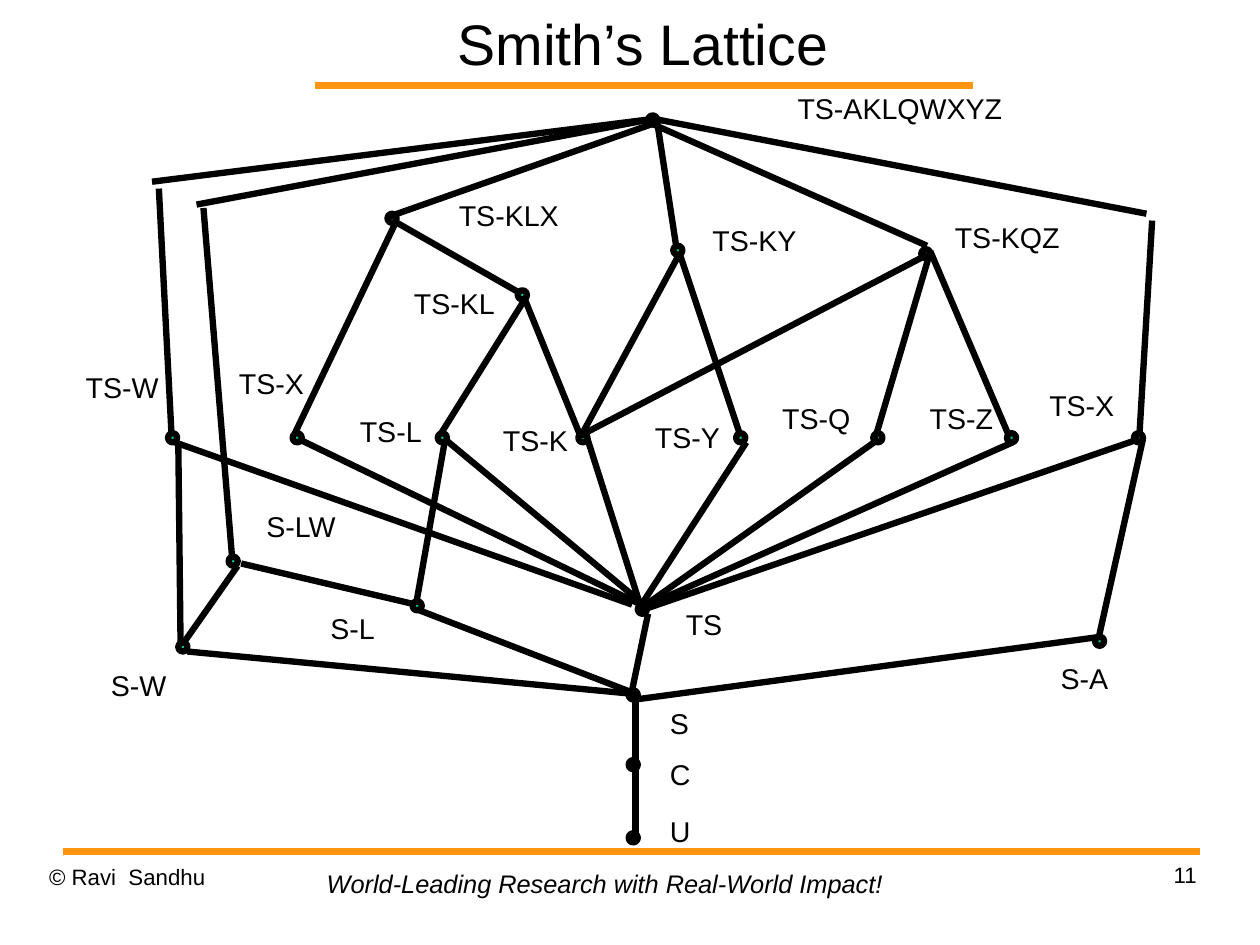
from dataclasses import dataclass

from lxml import etree
from pptx import Presentation
from pptx.dml.color import RGBColor
from pptx.enum.shapes import MSO_CONNECTOR, MSO_SHAPE
from pptx.enum.text import MSO_ANCHOR, PP_ALIGN
from pptx.oxml.ns import qn
from pptx.util import Inches, Pt

LINE = MSO_CONNECTOR.STRAIGHT
OVAL = MSO_SHAPE.OVAL
TOP, MIDDLE = MSO_ANCHOR.TOP, MSO_ANCHOR.MIDDLE
LEFT, CENTER, RIGHT = PP_ALIGN.LEFT, PP_ALIGN.CENTER, PP_ALIGN.RIGHT


@dataclass(frozen=True)
class Theme:
    """Colours, type sizes and line widths of the slide."""
    font: str = "Arial"
    ink: RGBColor = RGBColor(0x00, 0x00, 0x00)
    rule: RGBColor = RGBColor(0xFF, 0x95, 0x0E)
    node: RGBColor = RGBColor(0x00, 0xCC, 0x99)
    title: int = 36
    label: int = 18
    motto: int = 16
    small: int = 14
    edge: float = 4
    bar: float = 4.31
    dot: float = 0.08


def write(frame, text, theme, size, align=LEFT, space=1.0, pad=(0, 0),
          wrap=True, anchor=TOP, italic=False):
    """Put formatted text into a frame."""
    frame.margin_left = frame.margin_right = Inches(pad[0])
    frame.margin_top = frame.margin_bottom = Inches(pad[1])
    frame.word_wrap = wrap
    frame.vertical_anchor = anchor
    para = frame.paragraphs[0]
    para.alignment = align
    para.line_spacing = space
    para.space_before = Pt(0)
    run = para.add_run()
    run.text = text
    font = run.font
    font.name = theme.font
    font.size = Pt(size)
    font.italic = italic
    font.color.rgb = theme.ink


class Board:
    """Holds the theme and the current slide."""

    def __init__(self, slide, theme):
        """Keep the slide and its style."""
        self.slide = slide
        self.theme = theme

    def title(self, text, left, top, width, height):
        """Place and fill the title placeholder."""
        shape = self.slide.shapes.title
        shape.left, shape.top = Inches(left), Inches(top)
        shape.width, shape.height = Inches(width), Inches(height)
        write(shape.text_frame, text, self.theme, self.theme.title,
              align=CENTER, anchor=MIDDLE)

    def text(self, text, left, top, width, height, size, **style):
        """Add a text box."""
        box = self.slide.shapes.add_textbox(
            Inches(left), Inches(top), Inches(width), Inches(height))
        write(box.text_frame, text, self.theme, size, **style)

    def label(self, text, left, top, width, align):
        """Add the name of a node."""
        self.text(text, left, top, width, 0.37, self.theme.label, align=align,
                  space=0.85, pad=(0.07, 0.03), wrap=False)

    def line(self, start, end, color, width):
        """Add a straight line without a shadow."""
        line = self.slide.shapes.add_connector(
            LINE, *(Inches(value) for value in (*start, *end)))
        line.line.color.rgb = color
        line.line.width = Pt(width)
        etree.SubElement(line._element.spPr, qn("a:effectLst"))

    def rule(self, left, right, top):
        """Add a level orange rule."""
        self.line((left, top), (right, top), self.theme.rule, self.theme.bar)

    def edge(self, start, end):
        """Add an edge of the lattice."""
        self.line(start, end, self.theme.ink, self.theme.edge)

    def node(self, left, top):
        """Add a node of the lattice."""
        size = Inches(self.theme.dot)
        dot = self.slide.shapes.add_shape(
            OVAL, Inches(left), Inches(top), size, size)
        dot.shadow.inherit = False
        dot.fill.solid()
        dot.fill.fore_color.rgb = self.theme.node
        dot.line.color.rgb = self.theme.ink
        dot.line.width = Pt(self.theme.edge)


ROW = [1.47, 2.56, 3.83, 5.06, 6.44, 7.64, 8.81, 9.92]
STEM = [6.04, 6.65, 7.29]
NODES = [(5.67, 1.01), (2, 4.87), (1.56, 5.62), (3.61, 5.26), (9.58, 5.57),
         (5.58, 5.29), (4.53, 2.54), (5.89, 2.15), (8.06, 2.18), (3.39, 1.87)]
NODES += [(left, 3.79) for left in ROW] + [(5.5, top) for top in STEM]

EDGES = [
    ((5.56, 6.12), (5.56, 7.34)), ((1.64, 5.7), (5.53, 6.07)),
    ((5.56, 6.12), (9.64, 5.57)), ((2.08, 4.95), (1.61, 5.62)),
    ((3.67, 5.34), (5.56, 6.07)), ((2.11, 4.93), (3.64, 5.29)),
    ((1.56, 3.87), (1.58, 5.65)), ((10, 3.84), (9.61, 5.59)),
    ((1.53, 3.87), (5.53, 5.29)), ((2.61, 3.84), (5.67, 5.32)),
    ((3.89, 3.84), (5.67, 5.32)), ((5.14, 3.84), (5.61, 5.32)),
    ((6.53, 3.87), (5.58, 5.34)), ((7.69, 3.84), (5.61, 5.32)),
    ((8.86, 3.87), (5.61, 5.32)), ((9.97, 3.84), (5.61, 5.34)),
    ((5.67, 5.37), (5.53, 6.04)), ((3.89, 3.87), (3.64, 5.29)),
    ((4.61, 2.59), (3.86, 3.79)), ((4.58, 2.59), (5.08, 3.82)),
    ((5.94, 2.23), (5.08, 3.82)), ((5.94, 2.2), (6.47, 3.79)),
    ((8.11, 2.23), (5.06, 3.82)), ((8.14, 2.2), (8.83, 3.82)),
    ((8.14, 2.2), (7.67, 3.79)), ((3.47, 1.93), (2.58, 3.79)),
    ((3.44, 1.93), (4.56, 2.57)), ((5.75, 1.07), (3.39, 1.9)),
    ((5.75, 1.07), (5.92, 2.18)), ((5.72, 1.09), (8.11, 2.15)),
    ((5.72, 1.04), (1.72, 1.79)), ((1.78, 1.82), (2.03, 4.87)),
    ((5.72, 1.04), (1.33, 1.59)), ((1.39, 1.65), (1.5, 3.79)),
    ((5.72, 1.04), (10.03, 1.87)), ((10.08, 1.93), (9.97, 3.79)),
]

LABELS = {
    LEFT: [
        ("TS-W", 0.68, 3.25, 0.83), ("S-W", 0.9, 5.86, 0.68),
        ("TS", 5.93, 5.33, 0.51), ("S", 5.79, 6.19, 0.36),
        ("C", 5.79, 6.64, 0.38), ("U", 5.79, 7.14, 0.38),
        ("S-L", 2.82, 5.36, 0.6), ("S-LW", 2.26, 4.47, 0.83),
        ("S-A", 9.21, 5.8, 0.62),
    ],
    RIGHT: [
        ("TS-X", 1.97, 3.22, 0.76), ("TS-L", 3.01, 3.64, 0.75),
        ("TS-K", 4.26, 3.72, 0.78), ("TS-Y", 5.61, 3.69, 0.76),
        ("TS-Q", 6.73, 3.52, 0.78), ("TS-Z", 8.01, 3.52, 0.75),
        ("TS-X", 9.06, 3.41, 0.76), ("TS-KL", 3.47, 2.52, 0.93),
        ("TS-KLX", 3.86, 1.75, 1.1), ("TS-KY", 6.1, 1.97, 0.94),
        ("TS-KQZ", 8.22, 1.94, 1.12), ("TS-AKLQWXYZ", 6.81, 0.81, 2.03),
    ],
}


def main():
    """Build the lattice slide and save it."""
    deck = Presentation()
    deck.slide_width = Inches(28 / 2.54)
    deck.slide_height = Inches(21 / 2.54)
    theme = Theme()
    board = Board(deck.slides.add_slide(deck.slide_layouts[5]), theme)
    board.rule(2.76, 8.51, 0.75)
    board.rule(0.55, 10.5, 7.45)
    board.title("Smith’s Lattice", 2.41, 0, 6.43, 0.75)
    for spot in NODES:
        board.node(*spot)
    for start, end in EDGES:
        board.edge(start, end)
    for align, group in LABELS.items():
        for item in group:
            board.label(*item, align)
    board.text("© Ravi  Sandhu", 0.43, 7.55, 2.57, 0.57, theme.small,
               space=1.01)
    board.text("World-Leading Research with Real-World Impact!",
               2.76, 7.55, 5.08, 0.37, theme.motto, pad=(0.1, 0.05),
               wrap=False, italic=True)
    board.text("11", 7.9, 7.53, 2.57, 0.57, theme.small, align=RIGHT,
               space=1.01)
    deck.save("out.pptx")


if __name__ == "__main__":
    main()
